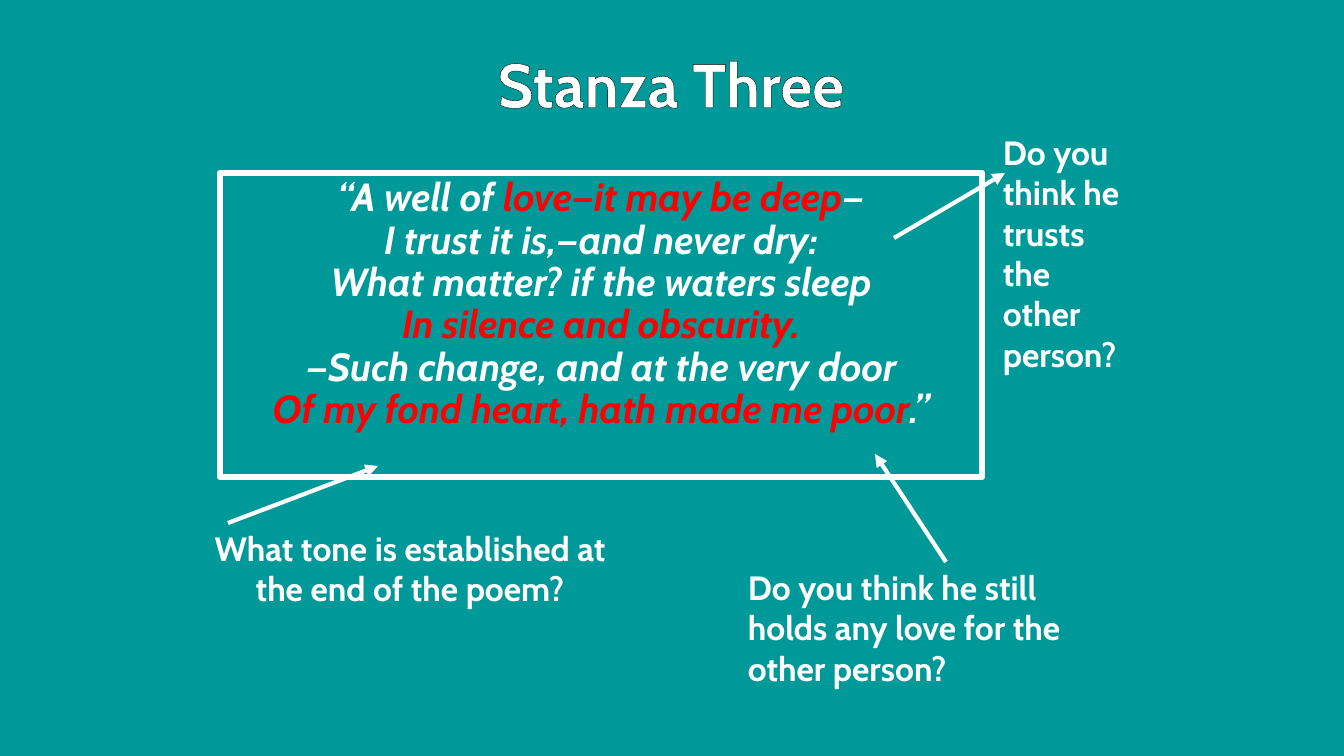
"""Build the Stanza Three slide: a framed verse with three questions around it."""
from lxml.etree import SubElement
from pptx import Presentation
from pptx.dml.color import RGBColor
from pptx.enum.shapes import MSO_CONNECTOR, MSO_SHAPE
from pptx.enum.text import MSO_ANCHOR, MSO_AUTO_SIZE, PP_ALIGN
from pptx.oxml.ns import qn
from pptx.util import Emu, Pt

WHITE, RED, TEAL, BLACK = "FFFFFF", "FF0000", "009999", "000000"
FONT = "Cabin"
LEFT, MID = PP_ALIGN.LEFT, PP_ALIGN.CENTER

TITLE = ("Stanza Three", (167, 41, 1008, 85), MID, 44)
ASKS = [
    ("Do you think he trusts the other person?", (993, 127, 148, 295), LEFT, 24),
    ("What tone is established at the end of the poem?", (204, 523, 412, 92), MID, 24),
    ("Do you think he still holds any love for the other person?",
     (738, 562, 373, 132), LEFT, 24),
]
FRAME = (220, 173, 762, 304)
VERSE = [
    [("“A well of ", WHITE), ("love—it may be deep", RED), ("—", WHITE)],
    [("I trust it is,—and never dry:", WHITE)],
    [("What matter? if the waters sleep", WHITE)],
    [("In silence and obscurity.", RED)],
    [("—Such change, and at the very door", WHITE)],
    [("Of my fond heart, hath made me poor", RED), (".”", WHITE)],
]
ARROWS = [(894, 238, 1005, 173), (228, 523, 378, 466), (946, 562, 875, 454)]


def px(*nums):
    return [Emu(round(n * 914400 / 100.8)) for n in nums]


def color(code):
    return RGBColor.from_string(code)


def style(para, size, align):
    para.alignment = align
    font = para.font
    font.name, font.size, font.bold = FONT, Pt(size), True
    return font


def add_text(slide, words, box, align, size):
    frame = slide.shapes.add_textbox(*px(*box)).text_frame
    frame.word_wrap = True
    frame.auto_size = MSO_AUTO_SIZE.SHAPE_TO_FIT_TEXT
    para = frame.paragraphs[0]
    style(para, size, align).color.rgb = color(WHITE)
    run = para.add_run()
    run.text = words
    return run


def add_edge(run, code, width):
    props = run.font._element
    edge = SubElement(props, qn("a:ln"), w=str(Pt(width)))
    fill = SubElement(edge, qn("a:solidFill"))
    SubElement(fill, qn("a:srgbClr"), val=code)
    props.insert(0, edge)


def add_verse(slide):
    rect = slide.shapes.add_shape(MSO_SHAPE.RECTANGLE, *px(*FRAME))
    rect.shadow.inherit = False
    rect.fill.background()
    rect.line.color.rgb = color(WHITE)
    rect.line.width = Pt(4.5)
    frame = rect.text_frame
    frame.word_wrap = True
    frame.vertical_anchor = MSO_ANCHOR.TOP
    para = frame.paragraphs[0]
    para.line_spacing = 0.9
    style(para, 28, MID).italic = True
    for row, parts in enumerate(VERSE):
        if row:
            para.add_line_break()
        for words, code in parts:
            run = para.add_run()
            run.text = words
            run.font.color.rgb = color(code)


def add_arrow(slide, ends):
    arrow = slide.shapes.add_connector(MSO_CONNECTOR.STRAIGHT, *px(*ends))
    arrow.line.color.rgb = color(WHITE)
    arrow.line.width = Pt(3)
    SubElement(arrow.line._get_or_add_ln(), qn("a:tailEnd"), type="triangle")
    SubElement(arrow._element.spPr, qn("a:effectLst"))


def main():
    deck = Presentation()
    deck.slide_width, deck.slide_height = px(1344, 756)
    slide = deck.slides.add_slide(deck.slide_layouts[6])
    back = slide.background.fill
    back.solid()
    back.fore_color.rgb = color(TEAL)
    add_edge(add_text(slide, *TITLE), BLACK, 1.5)
    add_verse(slide)
    for ask in ASKS:
        add_text(slide, *ask)
    for ends in ARROWS:
        add_arrow(slide, ends)
    deck.save("out.pptx")


if __name__ == "__main__":
    main()
